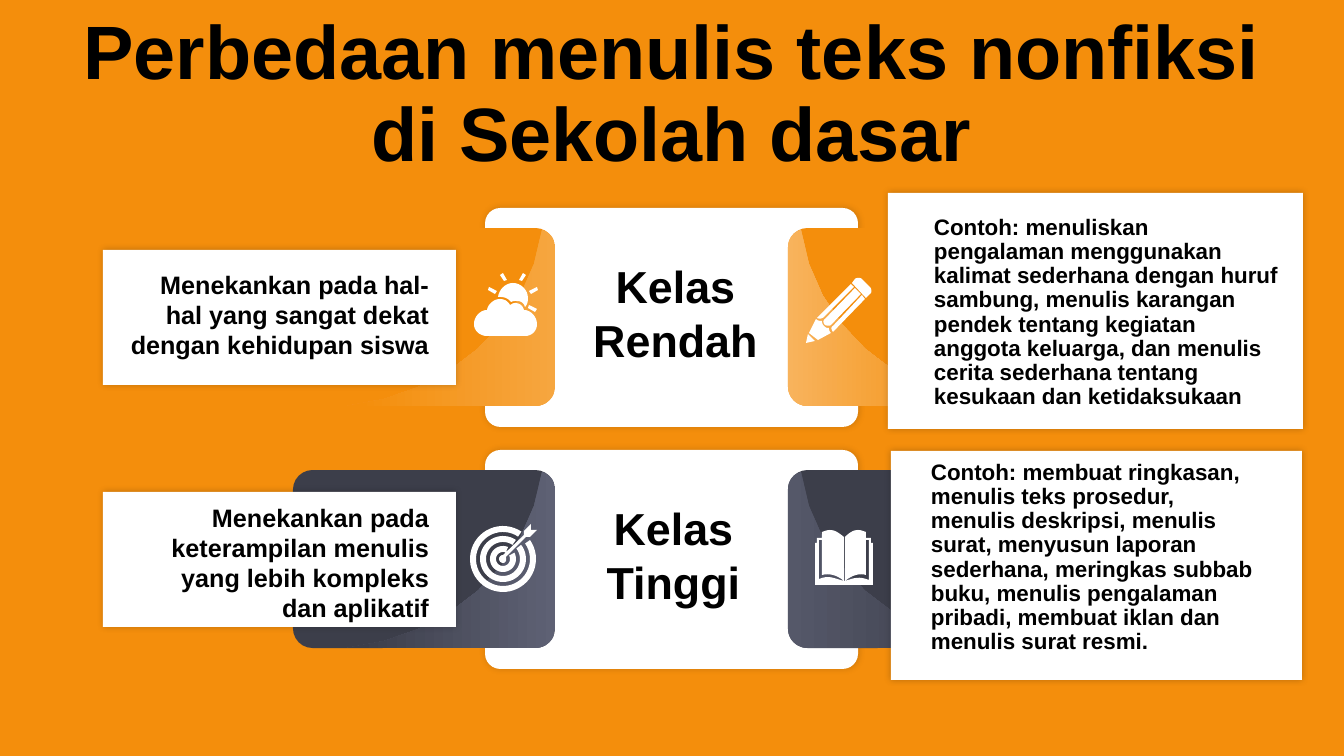
from math import cos, radians, sin

from lxml.etree import SubElement
from pptx import Presentation
from pptx.dml.color import RGBColor
from pptx.enum.shapes import MSO_SHAPE as Preset
from pptx.enum.text import MSO_ANCHOR as Anchor, PP_ALIGN as Align
from pptx.oxml.ns import qn
from pptx.util import Pt

PX = 9071  # EMU in one px
WIDTH, HEIGHT = 1344, 756
ROW_STEP = 242
MIRROR = 1343  # left and right panels: x becomes MIRROR - x
CURVE_STEPS = 8

ORANGE = RGBColor(0xF4, 0x8E, 0x0C)
LIGHT_ORANGE = RGBColor(0xF6, 0xA6, 0x3F)
PALE_ORANGE = RGBColor(0xF8, 0xB3, 0x5C)
SLATE = RGBColor(0x3C, 0x3E, 0x4A)
LIGHT_SLATE = RGBColor(0x5E, 0x61, 0x74)
MID_SLATE = RGBColor(0x55, 0x58, 0x69)
WHITE = RGBColor(0xFF, 0xFF, 0xFF)
BLACK = RGBColor(0x00, 0x00, 0x00)

deck = Presentation()
deck.slide_width, deck.slide_height = WIDTH * PX, HEIGHT * PX
page = deck.slides.add_slide(deck.slide_layouts[6])
page.background.fill.solid()
page.background.fill.fore_color.rgb = ORANGE


def write(text, place, size, align=Align.LEFT, anchor=Anchor.TOP, spacing=1.0, indent=0):
    box = page.shapes.add_textbox(*(value * PX for value in place))
    frame = box.text_frame
    frame.word_wrap = True
    frame.vertical_anchor = anchor
    frame.margin_left, frame.margin_right = (12 + indent) * PX, 12 * PX
    frame.margin_top = frame.margin_bottom = 5 * PX
    para = frame.paragraphs[0]
    para.alignment, para.line_spacing = align, spacing
    span = para.add_run()
    span.text = text
    span.font.name, span.font.size, span.font.bold = "Arial", Pt(size), True
    span.font.color.rgb = BLACK


def draw_outline(commands, mirrored=False, down=0):
    """Build one white freeform from M, L, C and Z commands in px."""
    tokens = iter(commands.split())
    contours = []

    for token in tokens:
        if token == "Z":
            continue
        count = 3 if token == "C" else 1
        points = [(float(next(tokens)), float(next(tokens))) for _ in range(count)]
        if token == "M":
            contours.append(points)
        elif token == "L":
            contours[-1] += points
        else:
            corners = [contours[-1][-1], *points]
            for step in range(1, CURVE_STEPS + 1):
                t = step / CURVE_STEPS
                weights = ((1 - t) ** 3, 3 * t * (1 - t) ** 2, 3 * t * t * (1 - t), t ** 3)
                contours[-1].append(tuple(
                    sum(w * corner[axis] for w, corner in zip(weights, corners))
                    for axis in (0, 1)))

    builder = None
    for contour in contours:
        placed = [(round((MIRROR - x if mirrored else x) * PX), round((y + down) * PX))
                  for x, y in contour]
        if builder is None:
            builder = page.shapes.build_freeform(*placed[0], scale=1.0)
        else:
            builder.move_to(*placed[0])
        builder.add_line_segments(placed[1:], close=True)
    outline = builder.convert_to_shape()
    outline.fill.solid()
    outline.fill.fore_color.rgb = WHITE
    outline.line.fill.background()
    outline.shadow.inherit = False
    return outline


SWEEP = ("M 542 230 C 550 232 555 239 555 247 L 555 387 C 555 398 546 406 535 406 "
         "L 347 406 C 449 395 529 323 542 230 Z")

SUN_CLOUD = (
    "M 529 305 L 537 309 L 535 312 L 528 308 Z M 537 287 L 538 290 L 531 294 L 529 291 Z "
    "M 489 287 L 497 291 L 495 294 L 488 290 Z M 523 273 L 526 275 L 522 281 L 519 280 Z "
    "M 503 273 L 507 280 L 504 281 L 500 275 Z "
    "M 500 299 C 504 299 508 301 510 305 C 512 304 513 303 515 303 C 520 303 523 306 524 310 "
    "C 531 310 537 317 537 324 C 537 331 532 336 525 336 L 487 336 C 480 336 474 331 474 324 "
    "C 474 317 480 310 487 310 C 488 304 494 299 500 299 Z "
    "M 513 283 C 521 283 528 290 528 298 C 528 302 527 305 525 307 C 524 303 521 301 517 301 "
    "C 515 301 513 301 511 302 C 509 299 505 297 501 297 L 498 297 C 499 290 505 283 513 283 Z")

PENCIL = (
    "M 808 334 L 815 341 L 806 343 Z "
    "M 816 319 C 818 321 820 321 822 321 C 822 322 822 324 824 326 C 826 328 827 328 829 328 "
    "C 829 329 829 331 831 333 L 818 340 L 809 333 Z "
    "M 862 295 L 865 299 L 833 332 C 831 329 831 327 833 326 Z "
    "M 855 288 L 861 294 L 831 325 C 830 326 827 326 825 325 C 823 323 823 320 825 319 Z "
    "M 851 284 L 854 287 L 824 317 C 822 319 819 319 817 318 Z "
    "M 859 278 C 860 278 861 278 862 279 L 870 287 C 872 289 872 293 870 294 L 866 298 "
    "L 852 283 L 855 279 C 856 278 857 278 859 278 Z")

BOOK = (
    "M 844 581 L 845 581 C 854 578 859 576 869 580 L 869 540 L 866 540 L 866 575 "
    "C 860 573 852 575 845 581 L 845 537 C 849 533 853 530 858 530 C 861 530 863 531 866 532 "
    "L 866 538 L 871 538 L 871 543 L 873 543 L 873 585 L 815 585 L 815 543 L 817 543 "
    "L 817 538 L 822 538 L 822 532 C 825 531 827 530 830 530 C 835 530 839 533 844 537 "
    "L 844 581 C 837 575 829 573 822 575 L 822 540 L 819 540 L 819 579 "
    "C 829 575 833 578 844 581 Z")

# Target: an arrow plus three rings left open around its shaft
TARGET = ("M 531 524 L 531 530 L 537 530 L 530 537 L 526 537 L 506 557 "
          "C 507 561 505 563 503 563 C 501 563 499 561 499 559 C 499 557 501 555 503 555 "
          "L 524 535 L 524 531 Z")
for outer, inner, start, end in ((33, 27, 56, 395), (23, 17, 56, 398), (13, 7, 67, 389)):
    angles = [start + (end - start) * step / 48 for step in range(49)]
    rim = [(outer, angle) for angle in angles] + [(inner, angle) for angle in reversed(angles)]
    TARGET += " M " + " L ".join(
        f"{503 + radius * cos(radians(angle)):.2f} {559 - radius * sin(radians(angle)):.2f}"
        for radius, angle in rim) + " Z"

rows = [
    dict(base=ORANGE, tints=(LIGHT_ORANGE, PALE_ORANGE), icons=(SUN_CLOUD, PENCIL),
         level="Kelas Rendah", level_place=(577, 254, 197, 119),
         focus="Menekankan pada hal-hal yang sangat dekat dengan kehidupan siswa",
         focus_place=(118, 264, 323, 102),
         sample="Contoh: menuliskan pengalaman menggunakan kalimat sederhana dengan huruf "
                "sambung, menulis karangan pendek tentang kegiatan anggota keluarga, dan menulis "
                "cerita sederhana tentang kesukaan dan ketidaksukaan",
         sample_card=(888, 193, 415, 236), sample_place=(897, 211, 396, 206)),
    dict(base=SLATE, tints=(LIGHT_SLATE, MID_SLATE), icons=(TARGET, BOOK),
         level="Kelas Tinggi", level_place=(575, 496, 197, 119),
         focus="Menekankan pada keterampilan menulis yang lebih kompleks dan aplikatif",
         focus_place=(118, 497, 323, 132),
         sample="Contoh: membuat ringkasan, menulis teks prosedur, menulis deskripsi, menulis "
                "surat, menyusun laporan sederhana, meringkas subbab buku, menulis pengalaman "
                "pribadi, membuat iklan dan menulis surat resmi.",
         sample_card=(891, 451, 411, 229), sample_place=(894, 456, 374, 206)),
]

write("Perbedaan menulis teks nonfiksi di Sekolah dasar", (35, 56, 1273, 80), 54,
      align=Align.CENTER, anchor=Anchor.MIDDLE, spacing=0.9)

for index, row in enumerate(rows):
    down = index * ROW_STEP
    # preset, place, colour, corner radius, shadow opacity in percent, sweep mirrored
    blocks = [
        (Preset.ROUNDED_RECTANGLE, (485, 208 + down, 373, 219), WHITE, 0.07, 14, None),
        (Preset.ROUNDED_RECTANGLE, (293, 228 + down, 262, 178), row["base"], 0.11, 0, False),
        (Preset.ROUNDED_RECTANGLE, (788, 228 + down, 262, 178), row["base"], 0.11, 0, True),
        (Preset.RECTANGLE, (103, 250 + down, 353, 135), WHITE, None, 22, None),
        (Preset.RECTANGLE, row["sample_card"], WHITE, None, 22, None),
    ]
    for preset, place, colour, radius, opacity, mirrored in blocks:
        block = page.shapes.add_shape(preset, *(value * PX for value in place))
        block.fill.solid()
        block.fill.fore_color.rgb = colour
        block.line.fill.background()
        block.shadow.inherit = False
        if radius:
            block.adjustments[0] = radius
        if opacity:
            effects = block._element.spPr.find(qn("a:effectLst"))
            glow = SubElement(effects, qn("a:outerShdw"), blurRad=str(Pt(5)), dist="0",
                              algn="ctr", rotWithShape="0")
            tone = SubElement(glow, qn("a:srgbClr"), val=str(BLACK))
            SubElement(tone, qn("a:alpha"), val=str(opacity * 1000))
        if mirrored is not None:
            fill = draw_outline(SWEEP, mirrored=mirrored, down=down).fill
            fill.gradient()
            fill.gradient_angle = 0 if mirrored else 180
            first, last = fill.gradient_stops
            first.color.rgb, first.position = row["tints"][mirrored], 0
            last.color.rgb, last.position = row["base"], 0.94

    for icon in row["icons"]:
        draw_outline(icon)
    write(row["level"], row["level_place"], 32, align=Align.CENTER)
    write(row["focus"], row["focus_place"], 18, align=Align.RIGHT)
    write(row["sample"], row["sample_place"], 16, spacing=0.9, indent=25)

deck.save("out.pptx")
